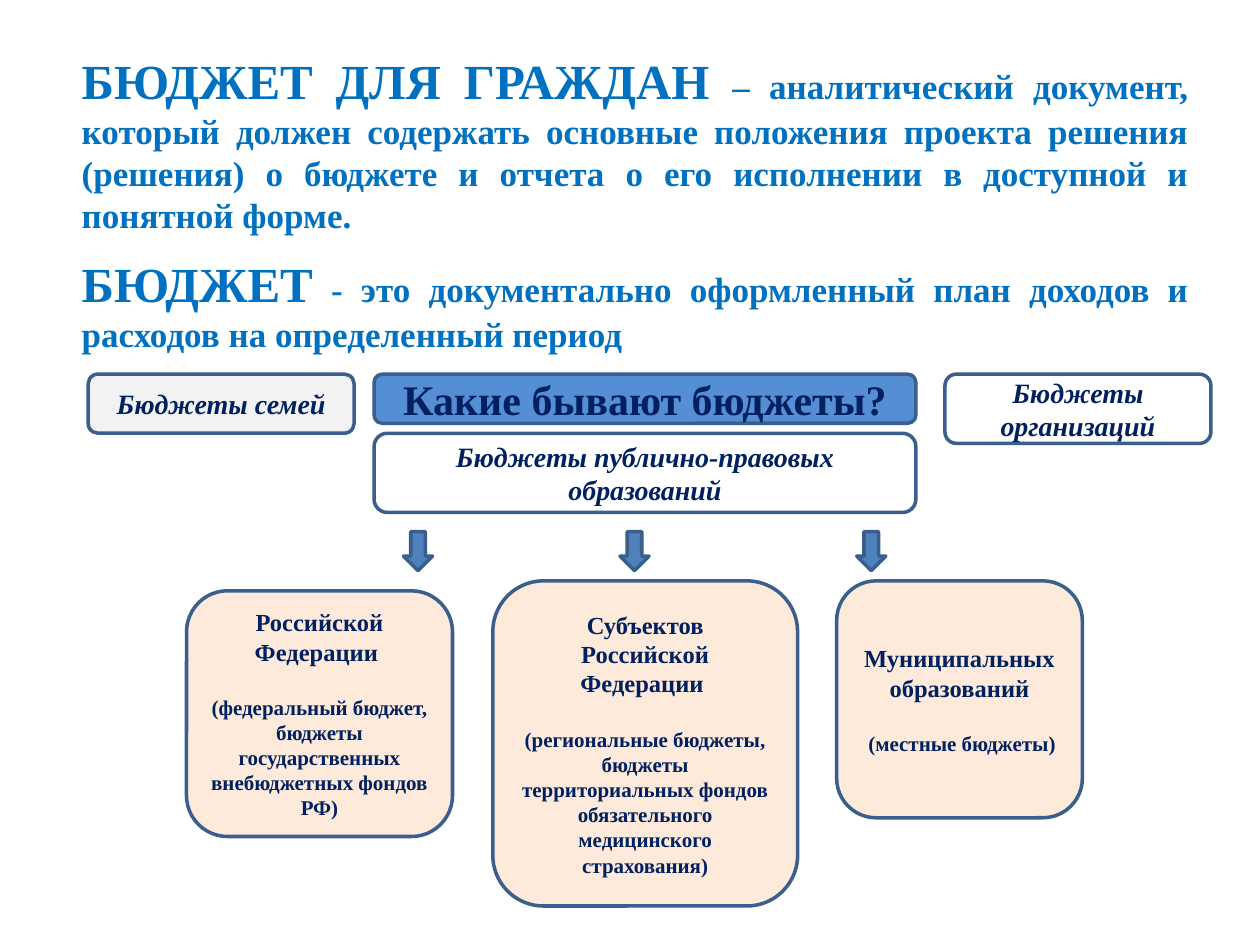
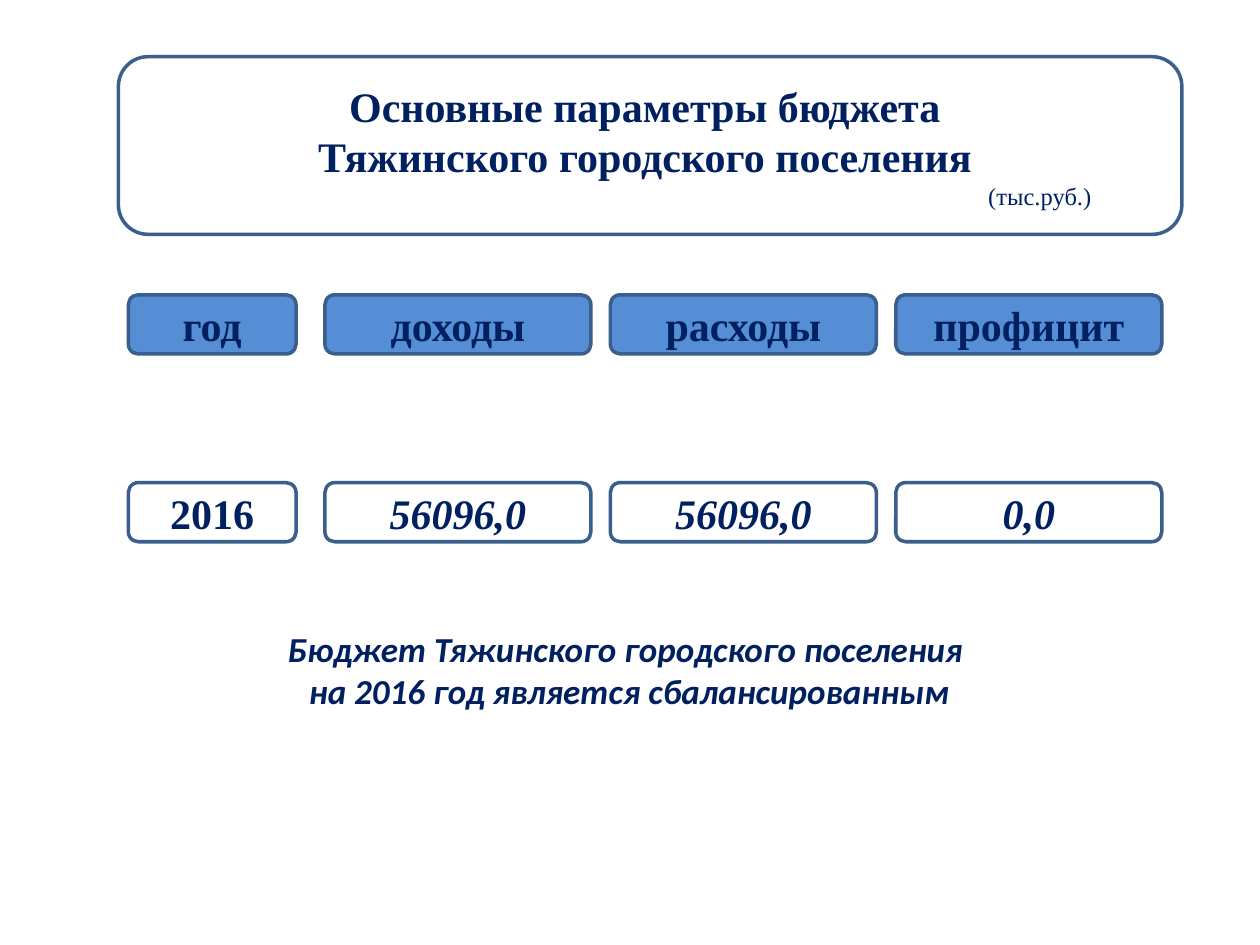
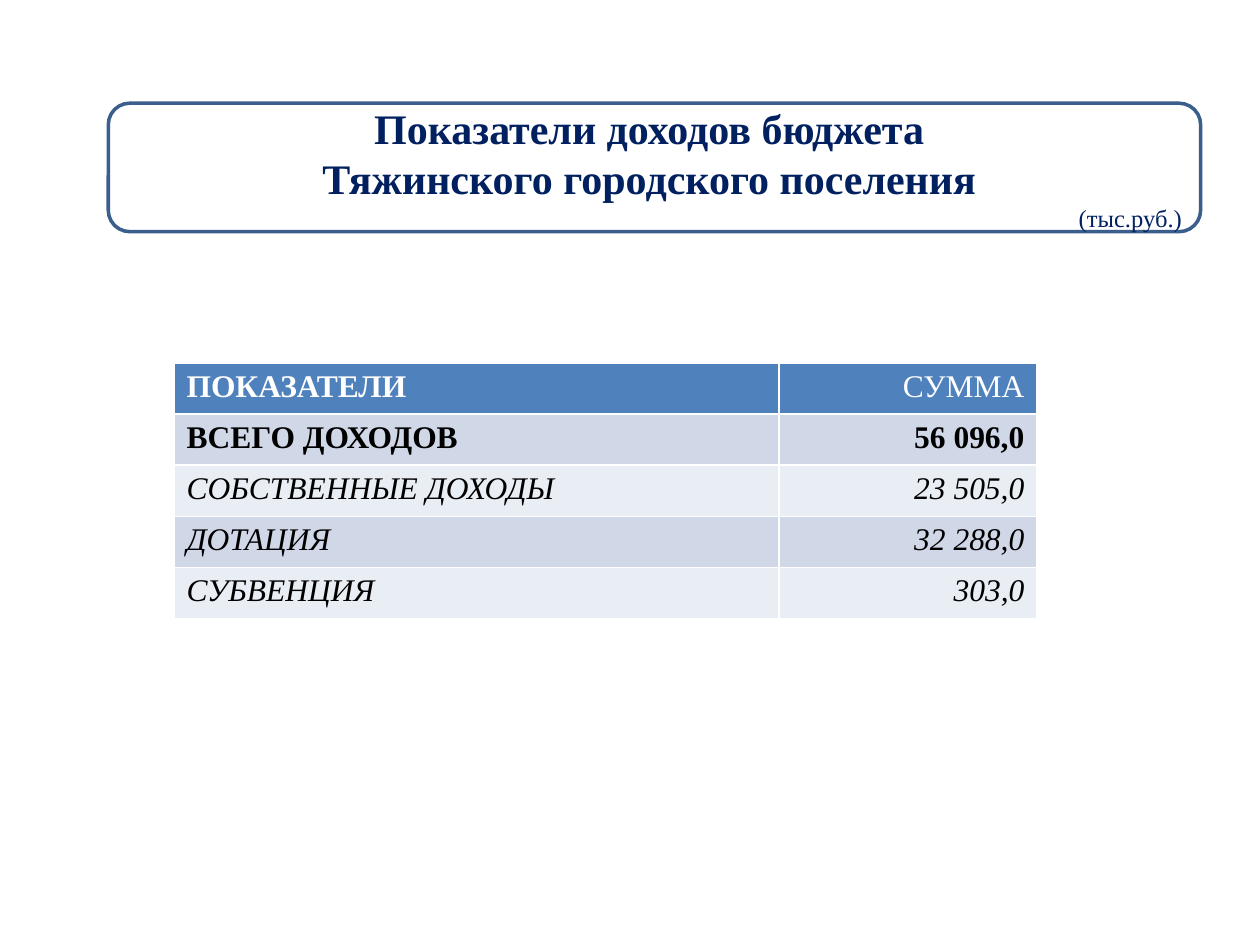
from collections import namedtuple

from pptx import Presentation
from pptx.dml.color import RGBColor
from pptx.enum.shapes import MSO_SHAPE
from pptx.enum.text import MSO_ANCHOR, PP_ALIGN
from pptx.util import Pt

ROUNDED = MSO_SHAPE.ROUNDED_RECTANGLE
DOWN_ARROW = MSO_SHAPE.DOWN_ARROW
MIDDLE = MSO_ANCHOR.MIDDLE
LEFT, CENTER, RIGHT, JUSTIFY = PP_ALIGN.LEFT, PP_ALIGN.CENTER, PP_ALIGN.RIGHT, PP_ALIGN.JUSTIFY

SERIF, SANS = "Times New Roman", "Calibri"
NAVY, SKY, OUTLINE = "002060", "0070C0", "3A5F8C"
WHITE, BLACK, GRAY, PEACH = "FFFFFF", "000000", "F2F2F2", "FDEADA"
HEADING_BLUE, ACCENT = "558ED5", "4F81BD"
BAND_DARK, BAND_LIGHT = "D0D8E8", "E9EDF4"

Box = namedtuple("Box", "left top width height")


def color(value):
    return RGBColor.from_string(value)


def inside(box, left, top, width, height):
    return Box(box.left + left, box.top + top, width, height)


def lengths(box):
    return [Pt(value) for value in box]


def style(font, size, ink=NAVY, bold=True, italic=False, name=SERIF):
    font.name = name
    font.size = Pt(size)
    font.bold = bold
    font.italic = italic
    font.color.rgb = color(ink)


def write(frame, lines, align=CENTER, **look):
    for index, (text, size) in enumerate(lines):
        para = frame.paragraphs[0] if index == 0 else frame.add_paragraph()
        para.text = text
        para.alignment = align
        style(para.font, size, **look)


def add_panel(page, box, fill=WHITE, lines=(), kind=ROUNDED, **look):
    shape = page.shapes.add_shape(kind, *lengths(box))
    shape.shadow.inherit = False
    shape.fill.solid()
    shape.fill.fore_color.rgb = color(fill)
    shape.line.color.rgb = color(OUTLINE)
    shape.line.width = Pt(2)
    frame = shape.text_frame
    frame.word_wrap = True
    frame.vertical_anchor = MIDDLE
    write(frame, lines, **look)
    return shape


def add_text(page, box):
    frame = page.shapes.add_textbox(*lengths(box)).text_frame
    frame.word_wrap = True
    return frame


def add_title(page, box, lines, unit_align, unit_indent=0):
    sized = [(line, 24) for line in lines]
    frame = add_panel(page, box, lines=sized).text_frame
    unit = frame.add_paragraph()
    unit.text = "(тыс.руб.)"
    unit.alignment = unit_align
    if unit_indent:
        unit._p.get_or_add_pPr().set("marL", str(Pt(unit_indent)))
    style(unit.font, 14, bold=False)


def add_definitions(page, box, definitions):
    frame = add_text(page, box)
    for index, (term, meaning) in enumerate(definitions):
        para = frame.paragraphs[0] if index == 0 else frame.add_paragraph()
        if index:
            para.space_before = Pt(10.4)
        para.alignment = JUSTIFY
        style(para.font, 20, ink=SKY)
        for text, size in ((term, 28), (meaning, 20)):
            span = para.add_run()
            span.text = text
            span.font.size = Pt(size)


def add_budget_kinds(page, box):
    add_panel(page, inside(box, 163.4, 0, 309.6, 28.1), HEADING_BLUE,
              [("Какие бывают бюджеты?", 24)])
    kinds = [
        ("Бюджеты семей", GRAY, (0, 0, 152, 33.8)),
        ("Бюджеты публично-правовых образований", WHITE, (163.4, 33.8, 309.6, 45.2)),
        ("Бюджеты организаций", WHITE, (489.6, 0, 152, 39.6)),
    ]
    for text, fill, place in kinds:
        add_panel(page, inside(box, *place), fill, [(text, 16)], italic=True)


def add_public_budgets(page, box):
    for left in (124, 247.7, 383):
        add_panel(page, inside(box, left, 0, 16.6, 22.3), ACCENT, kind=DOWN_ARROW)
    levels = [
        ("Российской Федерации ",
         "(федеральный бюджет, бюджеты государственных внебюджетных фондов РФ)",
         (0, 33.8, 152, 140.4)),
        ("Субъектов Российской Федерации ",
         "(региональные бюджеты, бюджеты территориальных фондов обязательного "
         "медицинского страхования)",
         (175, 28.1, 174.2, 185.8)),
        ("Муниципальных образований", " (местные бюджеты)", (371.5, 28.1, 140.4, 135.4)),
    ]
    for level, detail, place in levels:
        panel = add_panel(page, inside(box, *place), PEACH, [(level, 14), (detail, 12)])
        panel.text_frame.paragraphs[1].space_before = Pt(16.1)


def add_parameters(page, box):
    rows = [
        (0, HEADING_BLUE, ("год", "доходы", "расходы", "профицит")),
        (107.3, WHITE, ("2016", "56096,0", "56096,0", "0,0")),
    ]
    for top, fill, values in rows:
        for column, value in enumerate(values):
            left = 112.3 + 163.1 * (column - 1) if column else 0
            width = 152 if column else 95.8
            add_panel(page, inside(box, left, top, width, 33.8), fill, [(value, 24)],
                      italic=fill == WHITE and column > 0)


def add_income_table(page, box):
    rows = [
        ("ПОКАЗАТЕЛИ", "СУММА"),
        ("ВСЕГО ДОХОДОВ", "56 096,0"),
        ("СОБСТВЕННЫЕ ДОХОДЫ", "23 505,0"),
        ("ДОТАЦИЯ", "32 288,0"),
        ("СУБВЕНЦИЯ", "303,0"),
    ]
    table = page.shapes.add_table(len(rows), 2, *lengths(box)).table
    table.columns[0].width = Pt(345.6)
    table.columns[1].width = Pt(box.width - 345.6)
    for row, values in enumerate(rows):
        fill = ACCENT if row == 0 else BAND_DARK if row % 2 else BAND_LIGHT
        for column, value in enumerate(values):
            cell = table.cell(row, column)
            cell.fill.solid()
            cell.fill.fore_color.rgb = color(fill)
            write(cell.text_frame, [(value, 18)], RIGHT if column else LEFT,
                  ink=BLACK if row else WHITE,
                  bold=row == 1 or (row == 0 and column == 0), italic=row > 1)


def build_concepts(page):
    add_definitions(page, Box(39.6, 25.2, 646.6, 182.9), [
        ("БЮДЖЕТ ДЛЯ ГРАЖДАН ",
         "– аналитический документ, который должен содержать основные положения проекта "
         "решения (решения) о бюджете и отчета о его исполнении в доступной и понятной форме."),
        ("БЮДЖЕТ",
         " - это документально оформленный план доходов и расходов на определенный период"),
    ])
    add_budget_kinds(page, Box(50.4, 213.8, 641.6, 79))
    add_public_budgets(page, Box(106.6, 303.8, 511.9, 213.9))


def build_parameters(page):
    add_title(page, Box(67.7, 32.4, 607.7, 101.5),
              ["Основные параметры бюджета ", "Тяжинского городского поселения "], LEFT, 485)
    add_parameters(page, Box(73.4, 168.5, 590.5, 141.1))
    write(add_text(page, Box(121, 355, 477.4, 55.4)),
          [("Бюджет Тяжинского городского поселения ", 20),
           ("на 2016 год является сбалансированным", 20)], italic=True, name=SANS)


def build_income(page):
    add_title(page, Box(61.9, 59, 624.2, 73.4),
              ["Показатели доходов бюджета ", "Тяжинского городского поселения "], RIGHT)
    add_income_table(page, Box(99.4, 207.4, 493.2, 146))


def main():
    deck = Presentation()
    deck.slide_width, deck.slide_height = Pt(720), Pt(540)
    for build in (build_concepts, build_parameters, build_income):
        build(deck.slides.add_slide(deck.slide_layouts[6]))
    deck.save("out.pptx")


if __name__ == "__main__":
    main()
